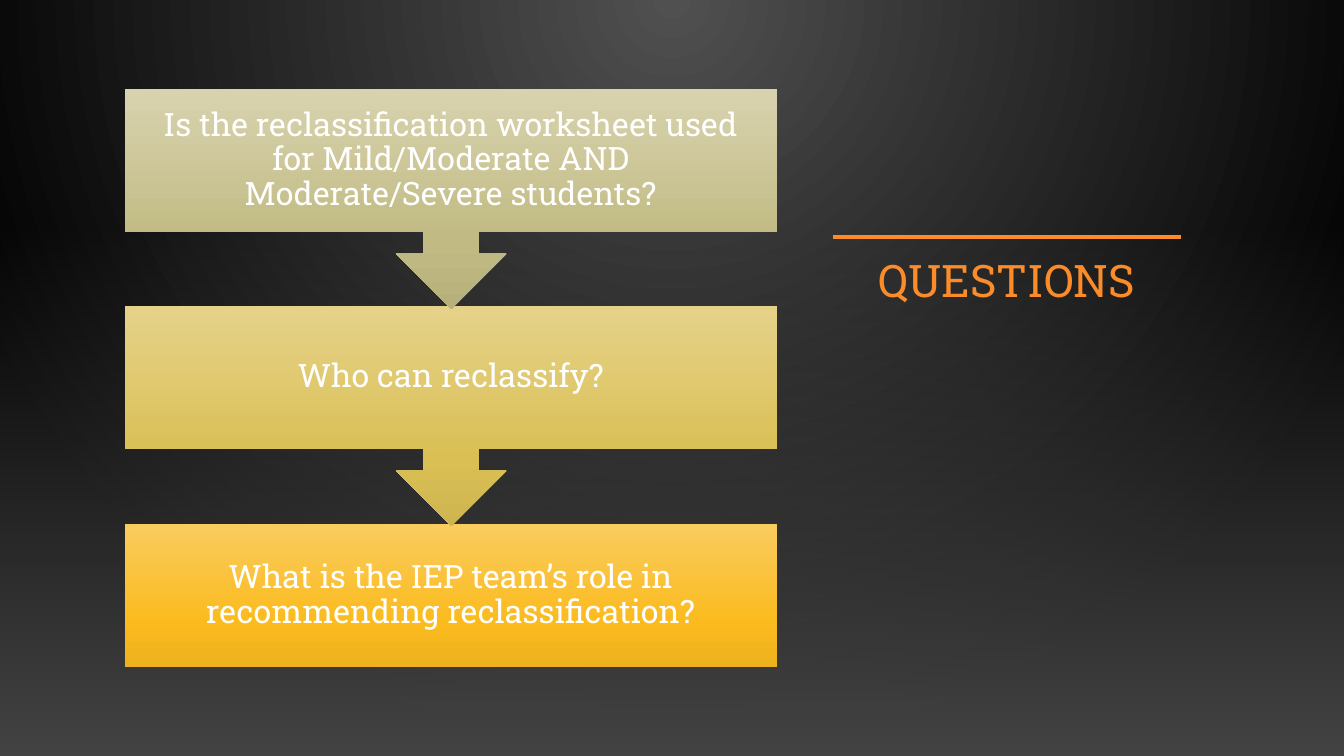
import pptx
import pptx.util
import pptx.oxml
import pptx.oxml.ns
import pptx.dml.color
import pptx.enum.shapes
import pptx.enum.text

PX = 914400 / 100.8
W, H = 1344, 756
FONT = "Roboto Slab"
COLORS = {"glow": "505050", "edge": "000000", "floor": "454545",
          "accent": "FB8C29", "text": "FFFFFF"}
LINEAR = '<a:lin ang="5400000" scaled="0"/>'
RADIAL = ('<a:path path="circle">'
          '<a:fillToRect l="43000" t="0" r="43000" b="100000"/></a:path>')
SHAPE = pptx.enum.shapes.MSO_SHAPE
ANCHOR = pptx.enum.text.MSO_ANCHOR


def paint(fill, props, stops, direction):
    fill.solid()
    gs = "".join(
        f'<a:gs pos="{pos * 1000}"><a:srgbClr val="{color}">'
        f'<a:alpha val="{alpha * 1000}"/></a:srgbClr></a:gs>'
        for pos, color, alpha in stops)
    grad = pptx.oxml.parse_xml(
        f'<a:gradFill {pptx.oxml.ns.nsdecls("a")} rotWithShape="0">'
        f'<a:gsLst>{gs}</a:gsLst>{direction}</a:gradFill>')
    props.replace(props.find(pptx.oxml.ns.qn("a:solidFill")), grad)


def add_text(box, text, size, color, anchor, inset):
    sp = s.shapes.add_textbox(*[round(v * PX) for v in box])
    tf = sp.text_frame
    tf.word_wrap = True
    tf.vertical_anchor = anchor
    if inset:
        tf.margin_left = tf.margin_right = round(inset * PX)
        tf.margin_top = tf.margin_bottom = round(inset * PX)
    p = tf.paragraphs[0]
    p.alignment = pptx.enum.text.PP_ALIGN.CENTER
    p.line_spacing = 0.9
    r = p.add_run()
    r.text = text
    r.font.name = FONT
    r.font.size = pptx.util.Pt(size)
    r.font.color.rgb = pptx.dml.color.RGBColor.from_string(COLORS[color])


prs = pptx.Presentation()
prs.slide_width = round(W * PX)
prs.slide_height = round(H * PX)
s = prs.slides.add_slide(prs.slide_layouts[6])

glow = [(0, COLORS["glow"], 100), (100, COLORS["edge"], 100)]
floor = [(0, COLORS["floor"], 0), (100, COLORS["floor"], 100)]
bg_fill = s.background.fill
paint(bg_fill, s.element.cSld.bg.bgPr, glow, RADIAL)

for top, stops, direction in [(0, glow, RADIAL), (223, floor, LINEAR)]:
    sp = s.shapes.add_shape(SHAPE.RECTANGLE, 0, round(top * PX),
                            round(W * PX), round((H - top) * PX))
    sp.shadow.inherit = False
    sp.line.fill.background()
    paint(sp.fill, sp.element.spPr, stops, direction)

add_text((833, 254, 348, 413), "QUESTIONS", 32, "accent", ANCHOR.TOP, 0)

rule = s.shapes.add_connector(pptx.enum.shapes.MSO_CONNECTOR.STRAIGHT,
                              *[round(v * PX) for v in (833, 237, 1181, 237)])
rule.line.color.rgb = pptx.dml.color.RGBColor.from_string(COLORS["accent"])
rule.line.width = pptx.util.Pt(2.5)
rule.element.spPr.append(pptx.oxml.parse_xml(
    f'<a:effectLst {pptx.oxml.ns.nsdecls("a")}/>'))

LEFT, TOP, BOX_W, BOX_H, CALLOUT_H = 125, 89, 652, 143, 220
questions = [
    ("Is the reclassification worksheet used for Mild/Moderate AND "
     "Moderate/Severe students?", ("D8D3AF", "C1BA83", "B7B07D")),
    ("Who can reclassify?", ("E5D28A", "DABF54", "CEB551")),
    ("What is the IEP team’s role in recommending reclassification?",
     ("FACC5F", "FBBB1E", "EDB11E")),
]
for i, (question, shades) in reversed(list(enumerate(questions))):
    top = TOP + i * 435 // 2
    last = i == len(questions) - 1
    kind = SHAPE.RECTANGLE if last else SHAPE.UP_ARROW_CALLOUT
    height = BOX_H if last else CALLOUT_H
    sp = s.shapes.add_shape(
        kind, *[round(v * PX) for v in (LEFT, top, BOX_W, height)])
    sp.rotation = 0 if last else 180
    sp.shadow.inherit = False
    sp.line.fill.background()
    stops = [(pos, shade, 100) for pos, shade in zip((0, 69, 100), shades)]
    paint(sp.fill, sp.element.spPr, stops, LINEAR)
    add_text((LEFT, top, BOX_W, BOX_H), question, 23, "text", ANCHOR.MIDDLE, 18)

prs.save("out.pptx")
